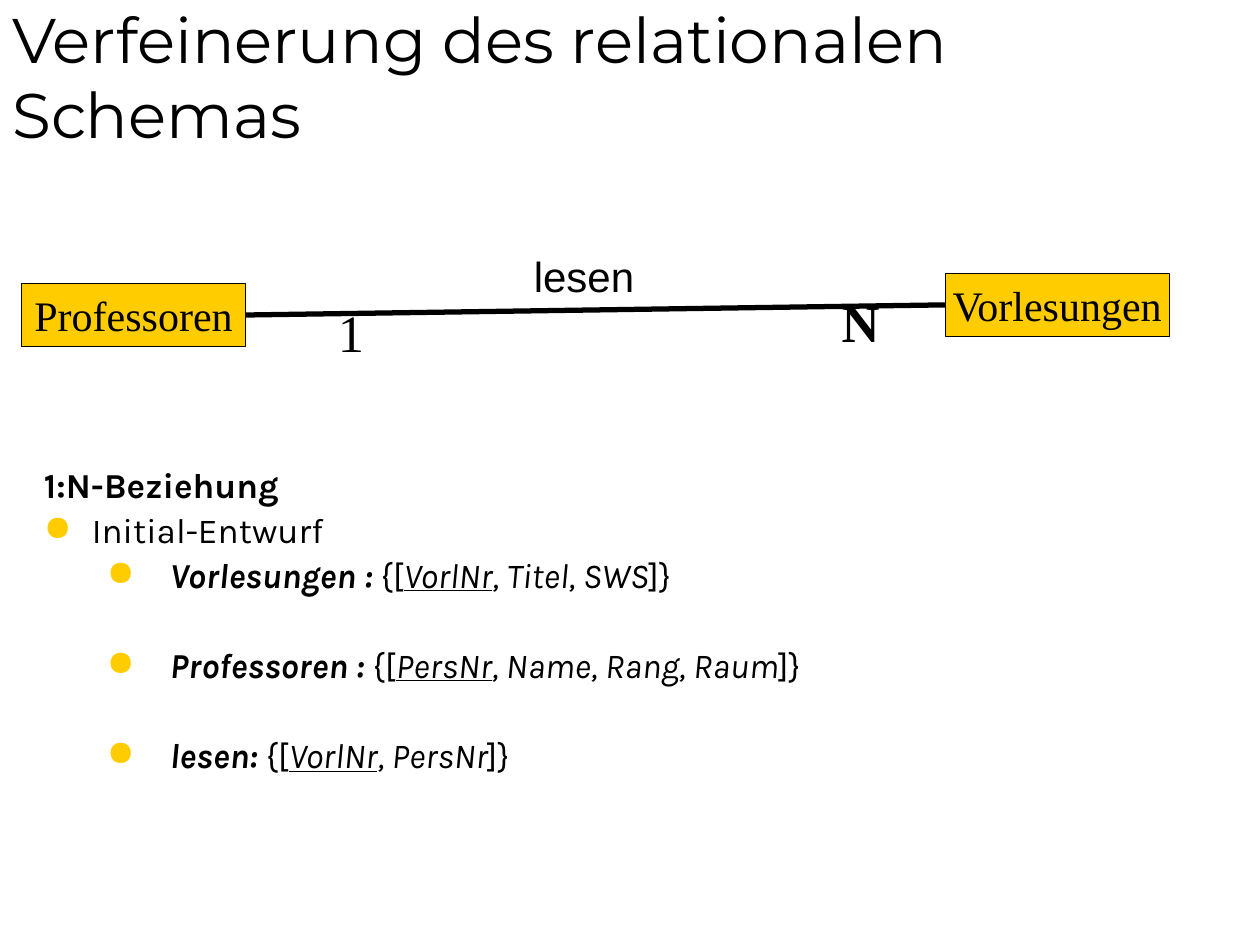
from dataclasses import dataclass

from lxml.etree import SubElement
from pptx import Presentation
from pptx.dml.color import RGBColor
from pptx.enum.shapes import MSO_CONNECTOR, MSO_SHAPE
from pptx.enum.text import MSO_ANCHOR, MSO_AUTO_SIZE, PP_ALIGN
from pptx.oxml.ns import qn
from pptx.util import Inches, Pt


@dataclass(frozen=True)
class Theme:
    """Colours, fonts and type sizes of the slide."""
    ink: RGBColor = RGBColor(0x00, 0x00, 0x00)
    accent: RGBColor = RGBColor(0xFF, 0xCC, 0x00)
    title_font: str = "Montserrat"
    body_font: str = "Karla"
    entity_font: str = "Times New Roman"
    relation_font: str = "Arial"
    title_size: int = 36
    body_size: int = 20
    diagram_size: int = 24
    cardinality_size: int = 30


THEME = Theme()
SCHEMAS = [
    ("Vorlesungen : ", "VorlNr", ", Titel, SWS"),
    ("Professoren : ", "PersNr", ", Name, Rang, Raum"),
    ("lesen: ", "VorlNr", ", PersNr"),
]


def style(paragraph, font, size, bold=None):
    """Set the common font of a paragraph."""
    paragraph.font.name = font
    paragraph.font.size = Pt(size)
    paragraph.font.color.rgb = THEME.ink
    paragraph.font.bold = bold


def add_text_frame(slide, left, top, width, height, wrap=True):
    """Add a text box and return its text frame."""
    frame = slide.shapes.add_textbox(
        Inches(left), Inches(top), Inches(width), Inches(height)).text_frame
    frame.word_wrap = wrap
    return frame


def add_title(slide, text):
    """Add the slide title, sitting on the bottom of its box."""
    frame = add_text_frame(slide, 0, 0, 10, 1.25)
    frame.vertical_anchor = MSO_ANCHOR.BOTTOM
    frame.text = text
    style(frame.paragraphs[0], THEME.title_font, THEME.title_size)


def add_entity(slide, name, left, top):
    """Add an entity rectangle."""
    entity = slide.shapes.add_shape(
        MSO_SHAPE.RECTANGLE, Inches(left), Inches(top), Inches(1.78), Inches(0.5))
    entity.shadow.inherit = False
    entity.fill.solid()
    entity.fill.fore_color.rgb = THEME.accent
    entity.line.color.rgb = THEME.ink
    entity.line.width = Pt(0.5)
    frame = entity.text_frame
    frame.word_wrap = False
    frame.vertical_anchor = MSO_ANCHOR.MIDDLE
    frame.text = name
    frame.paragraphs[0].alignment = PP_ALIGN.CENTER
    style(frame.paragraphs[0], THEME.entity_font, THEME.diagram_size)
    return entity


def add_relation(slide, source, target):
    """Join the right side of one entity to the left side of another."""
    relation = slide.shapes.add_connector(MSO_CONNECTOR.STRAIGHT, 0, 0, 0, 0)
    relation.begin_connect(source, 3)
    relation.end_connect(target, 1)
    relation.line.color.rgb = THEME.ink
    relation.line.width = Pt(3)
    SubElement(relation._element.spPr, qn("a:effectLst"))


def add_label(slide, text, place, font, size, bold=None):
    """Add a centred label beside the relation line."""
    frame = add_text_frame(slide, *place, wrap=False)
    frame.auto_size = MSO_AUTO_SIZE.SHAPE_TO_FIT_TEXT
    frame.text = text
    frame.paragraphs[0].alignment = PP_ALIGN.CENTER
    style(frame.paragraphs[0], font, size, bold)


def set_bullet(paragraph, margin, hanging):
    """Give a paragraph a hanging round bullet."""
    properties = paragraph._p.get_or_add_pPr()
    properties.set("marL", str(Inches(margin)))
    properties.set("indent", str(-Inches(hanging)))
    colour = SubElement(properties, qn("a:buClr"))
    SubElement(colour, qn("a:srgbClr"), val=str(THEME.accent))
    SubElement(properties, qn("a:buChar"), char="●")


def add_item(frame, margin, hanging, space_before):
    """Append a bulleted body paragraph."""
    item = frame.add_paragraph()
    set_bullet(item, margin, hanging)
    item.line_spacing = 0.9
    item.space_before = Pt(space_before)
    style(item, THEME.body_font, THEME.body_size)
    return item


def add_schema(item, relation, key, attributes):
    """Write a relation schema with its key underlined."""
    parts = [(relation, True, True, False), ("{[", False, False, False),
             (key, False, True, True), (attributes, False, True, False),
             ("]}", False, False, False)]
    for text, bold, italic, underline in parts:
        run = item.add_run()
        run.text = text
        run.font.bold = bold
        run.font.italic = italic
        run.font.underline = underline


def add_body(slide):
    """Add the heading and the list of initial schemas."""
    frame = add_text_frame(slide, 0.25, 3.67, 9.75, 3.83)
    heading = frame.paragraphs[0]
    heading.text = "1:N-Beziehung"
    heading.line_spacing = 0.9
    style(heading, THEME.body_font, THEME.body_size, bold=True)
    add_item(frame, 0.38, 0.38, 4).text = "Initial-Entwurf"
    for index, schema in enumerate(SCHEMAS):
        add_schema(add_item(frame, 1, 0.5, 30 if index else 4), *schema)


def main():
    """Build and save the slide."""
    presentation = Presentation()
    presentation.slide_width = Inches(10)
    presentation.slide_height = Inches(7.5)
    slide = presentation.slides.add_slide(presentation.slide_layouts[6])
    add_title(slide, "Verfeinerung des relationalen Schemas")
    add_body(slide)
    professors = add_entity(slide, "Professoren", 0.17, 2.25)
    lectures = add_entity(slide, "Vorlesungen", 7.5, 2.17)
    add_relation(slide, professors, lectures)
    add_label(slide, "1", (2.58, 2.33, 0.41, 0.6),
              THEME.entity_font, THEME.cardinality_size)
    add_label(slide, "N", (6.58, 2.25, 0.5, 0.6),
              THEME.entity_font, THEME.cardinality_size, bold=True)
    add_label(slide, "lesen", (4.13, 1.94, 1.01, 0.5),
              THEME.relation_font, THEME.diagram_size)
    presentation.save("out.pptx")


if __name__ == "__main__":
    main()
